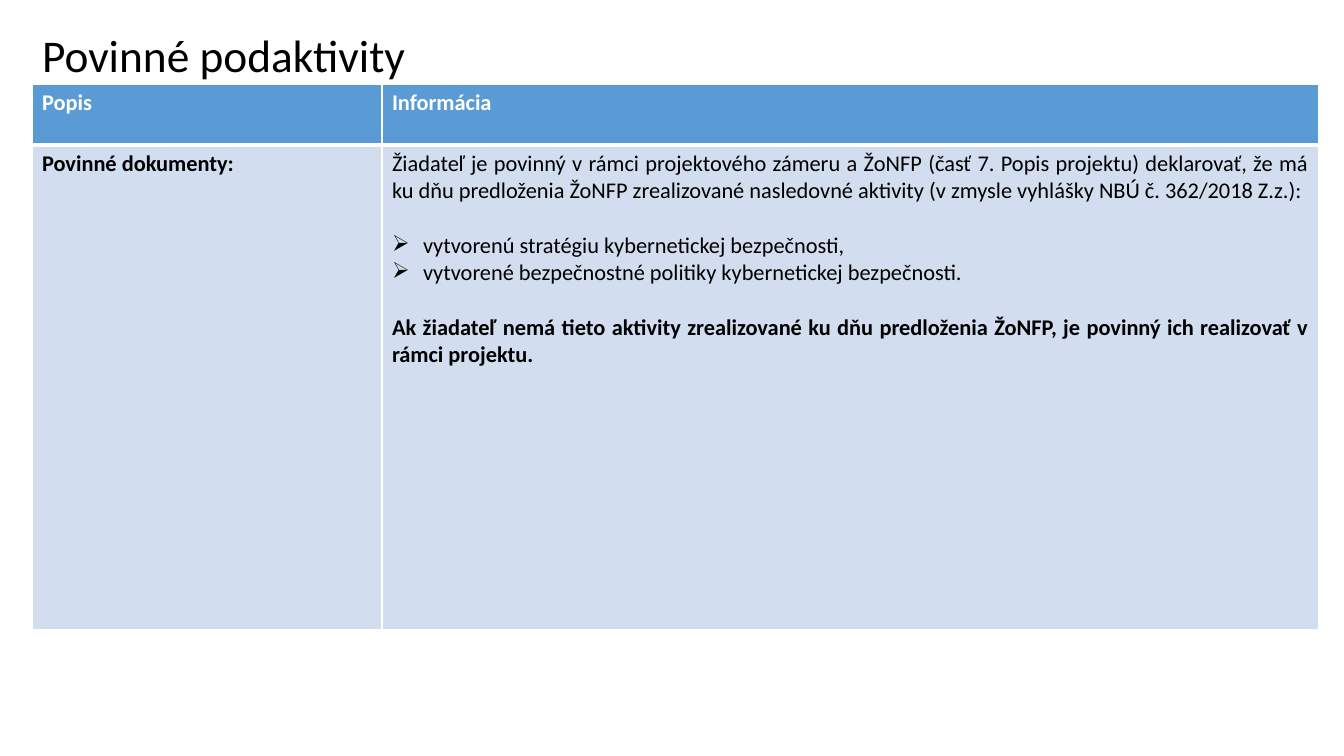
from lxml.etree import SubElement
from pptx import Presentation
from pptx.dml.color import RGBColor
from pptx.enum.text import MSO_ANCHOR, MSO_AUTO_SIZE, PP_ALIGN
from pptx.oxml import parse_xml
from pptx.oxml.ns import nsdecls, qn
from pptx.util import Pt

PX = 914400 / 100.8
LEFT, TABLE_TOP = 32, 84
COLUMNS, ROWS = (350, 937), (61, 485)
INDENT = 31
BLUE, PALE, WHITE, BLACK = "5B9BD5", "D2DEEF", "FFFFFF", "000000"
GAP = 19.5


def px(n):
    return round(n * PX)


def add_run(p, text, size, color, bold=False):
    r = p.add_run()
    r.text = text
    r.font.name = "Calibri"
    r.font.size = Pt(size)
    r.font.bold = bold
    r.font.color.rgb = RGBColor.from_string(color)


prs = Presentation()
prs.slide_width, prs.slide_height = px(1344), px(756)
s = prs.slides.add_slide(prs.slide_layouts[5])

title = s.shapes.title
title.left, title.top, title.width, title.height = px(LEFT), px(32), px(1008), px(51)
tf = title.text_frame
tf.word_wrap = True
tf.auto_size = MSO_AUTO_SIZE.NONE
tf.vertical_anchor = MSO_ANCHOR.MIDDLE
p = tf.paragraphs[0]
p.alignment = PP_ALIGN.LEFT
p.line_spacing = 0.9
add_run(p, "Povinné podaktivity", 32.4, BLACK)

table = s.shapes.add_table(2, 2, px(LEFT), px(TABLE_TOP), px(sum(COLUMNS)), px(sum(ROWS))).table
table.first_row = table.horz_banding = False
for column, width in zip(table.columns, COLUMNS):
    column.width = px(width)
for row, height in zip(table.rows, ROWS):
    row.height = px(height)

# Each paragraph: text, bold, bulleted, space before in points
cells = [
    [
        [("Popis", True, False, 0)],
        [("Informácia", True, False, 0)],
    ],
    [
        [("Povinné dokumenty:", True, False, 0)],
        [
            ("Žiadateľ je povinný v rámci projektového zámeru a ŽoNFP (časť 7. Popis projektu) "
             "deklarovať, že má ku dňu predloženia ŽoNFP zrealizované nasledovné aktivity "
             "(v zmysle vyhlášky NBÚ č. 362/2018 Z.z.):", False, False, 0),
            ("vytvorenú stratégiu kybernetickej bezpečnosti,", False, True, GAP),
            ("vytvorené bezpečnostné politiky kybernetickej bezpečnosti.", False, True, 0),
            ("Ak žiadateľ nemá tieto aktivity zrealizované ku dňu predloženia ŽoNFP, "
             "je povinný ich realizovať v rámci projektu.", True, False, GAP),
        ],
    ],
]

row_styles = [(BLUE, WHITE, PP_ALIGN.LEFT, 3), (PALE, BLACK, PP_ALIGN.JUSTIFY, 1)]
for i, (fill, color, align, bottom) in enumerate(row_styles):
    for j, paragraphs in enumerate(cells[i]):
        cell = table.cell(i, j)
        cell.fill.solid()
        cell.fill.fore_color.rgb = RGBColor.from_string(fill)
        tcPr = cell._tc.get_or_add_tcPr()
        for k, (side, width) in enumerate((("L", 1), ("R", 1), ("T", 1), ("B", bottom))):
            tcPr.insert(k, parse_xml(
                f'<a:ln{side} {nsdecls("a")} w="{Pt(width)}"><a:solidFill>'
                f'<a:srgbClr val="{WHITE}"/></a:solidFill></a:ln{side}>'))
        for k, (text, bold, bulleted, before) in enumerate(paragraphs):
            tf = cell.text_frame
            p = tf.add_paragraph() if k else tf.paragraphs[0]
            p.alignment = align
            p.space_before = Pt(before)
            add_run(p, text, 16, color, bold)
            if bulleted:
                pPr = p._p.get_or_add_pPr()
                pPr.set("marL", str(px(INDENT)))
                pPr.set("indent", str(-px(INDENT)))
                SubElement(pPr, qn("a:buFont")).set("typeface", "Wingdings")
                SubElement(pPr, qn("a:buChar")).set("char", "Ø")

prs.save("out.pptx")
